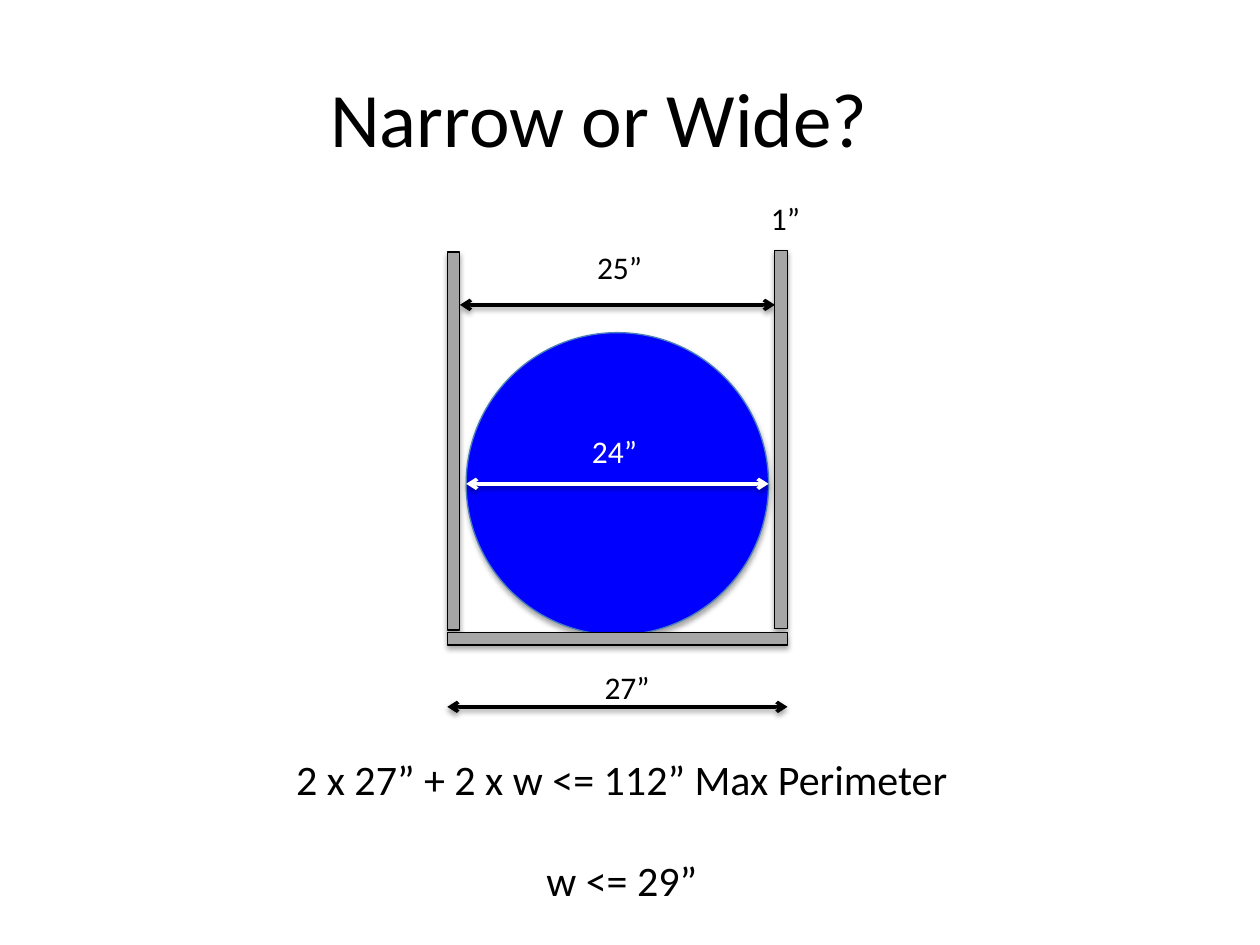
from lxml.etree import SubElement
from pptx import Presentation
from pptx.dml.color import RGBColor
from pptx.enum.shapes import MSO_CONNECTOR, MSO_SHAPE
from pptx.enum.text import MSO_ANCHOR, MSO_AUTO_SIZE, PP_ALIGN
from pptx.oxml.ns import qn
from pptx.util import Emu, Pt

PX = 9144
BLACK, WHITE, GREY, BLUE, EDGE = "000000", "FFFFFF", "A6A6A6", "0000FF", "4B7EBC"


def px(value):
    return Emu(value * PX)


def color(value):
    return RGBColor.from_string(value)


class Diagram:
    font_name = "Calibri"

    def __init__(self, slide):
        self.slide = slide

    def style(self, paragraph, size, fill=BLACK):
        paragraph.font.name = self.font_name
        paragraph.font.size = Pt(size)
        paragraph.font.color.rgb = color(fill)

    def shadow(self, shape, opacity, distance):
        effects = SubElement(shape._element.spPr, qn("a:effectLst"))
        outer = SubElement(effects, qn("a:outerShdw"), blurRad=str(Pt(3.1)),
                           dist=str(Pt(distance)), dir="5400000", rotWithShape="0")
        tint = SubElement(outer, qn("a:srgbClr"), val=BLACK)
        SubElement(tint, qn("a:alpha"), val=str(opacity * 1000))

    def title(self, text, left, top, width, height):
        shape = self.slide.shapes.title
        shape.left, shape.top, shape.width, shape.height = map(px, (left, top, width, height))
        frame = shape.text_frame
        frame.text = text
        frame.vertical_anchor = MSO_ANCHOR.MIDDLE
        frame.paragraphs[0].alignment = PP_ALIGN.CENTER
        self.style(frame.paragraphs[0], 44)

    def shape(self, kind, left, top, width, height, fill, edge):
        shape = self.slide.shapes.add_shape(kind, *map(px, (left, top, width, height)))
        shape.fill.solid()
        shape.fill.fore_color.rgb = color(fill)
        shape.line.color.rgb = color(edge)
        shape.line.width = Pt(0.75)
        self.shadow(shape, 35, 1.8)

    def board(self, left, top, width, height):
        self.shape(MSO_SHAPE.RECTANGLE, left, top, width, height, GREY, BLACK)

    def arrow(self, left, right, y, fill=BLACK):
        connector = self.slide.shapes.add_connector(
            MSO_CONNECTOR.STRAIGHT, *map(px, (left, y, right, y)))
        connector.line.color.rgb = color(fill)
        connector.line.width = Pt(2)
        for end in ("a:headEnd", "a:tailEnd"):
            SubElement(connector.line._get_or_add_ln(), qn(end), type="arrow")
        self.shadow(connector, 38, 1.6)

    def label(self, text, left, top, width, fill=BLACK):
        box = self.slide.shapes.add_textbox(*map(px, (left, top, width, 40)))
        frame = box.text_frame
        frame.word_wrap = False
        frame.auto_size = MSO_AUTO_SIZE.SHAPE_TO_FIT_TEXT
        frame.text = text
        self.style(frame.paragraphs[0], 18, fill)

    def formulas(self, lines, left, top, width, height, gap):
        frame = self.slide.shapes.add_textbox(*map(px, (left, top, width, height))).text_frame
        frame.word_wrap = False
        frame.text = "\n".join(lines)
        for index, paragraph in enumerate(frame.paragraphs):
            paragraph.alignment = PP_ALIGN.CENTER
            if index:
                paragraph.space_before = Pt(gap)
            self.style(paragraph, 24)


def main():
    presentation = Presentation()
    presentation.slide_width, presentation.slide_height = px(1000), px(750)
    diagram = Diagram(presentation.slides.add_slide(presentation.slide_layouts[5]))

    diagram.title("Narrow or Wide?", 191, 30, 569, 125)
    diagram.shape(MSO_SHAPE.OVAL, 370, 264, 240, 240, BLUE, EDGE)
    diagram.arrow(370, 610, 384, WHITE)
    diagram.label("24”", 460, 338, 56, WHITE)
    diagram.arrow(365, 615, 242)
    diagram.board(615, 199, 10, 300)
    diagram.board(355, 200, 10, 300)
    diagram.label("25”", 464, 192, 56)
    diagram.board(355, 502, 270, 10)
    diagram.label("1”", 602, 153, 44)
    diagram.label("27”", 470, 525, 56)
    diagram.arrow(355, 625, 561)
    diagram.formulas(["2 x 27” + 2 x w <= 112” Max Perimeter", "w <= 29”"],
                     223, 593, 541, 131, 29)

    presentation.save("out.pptx")


if __name__ == "__main__":
    main()
